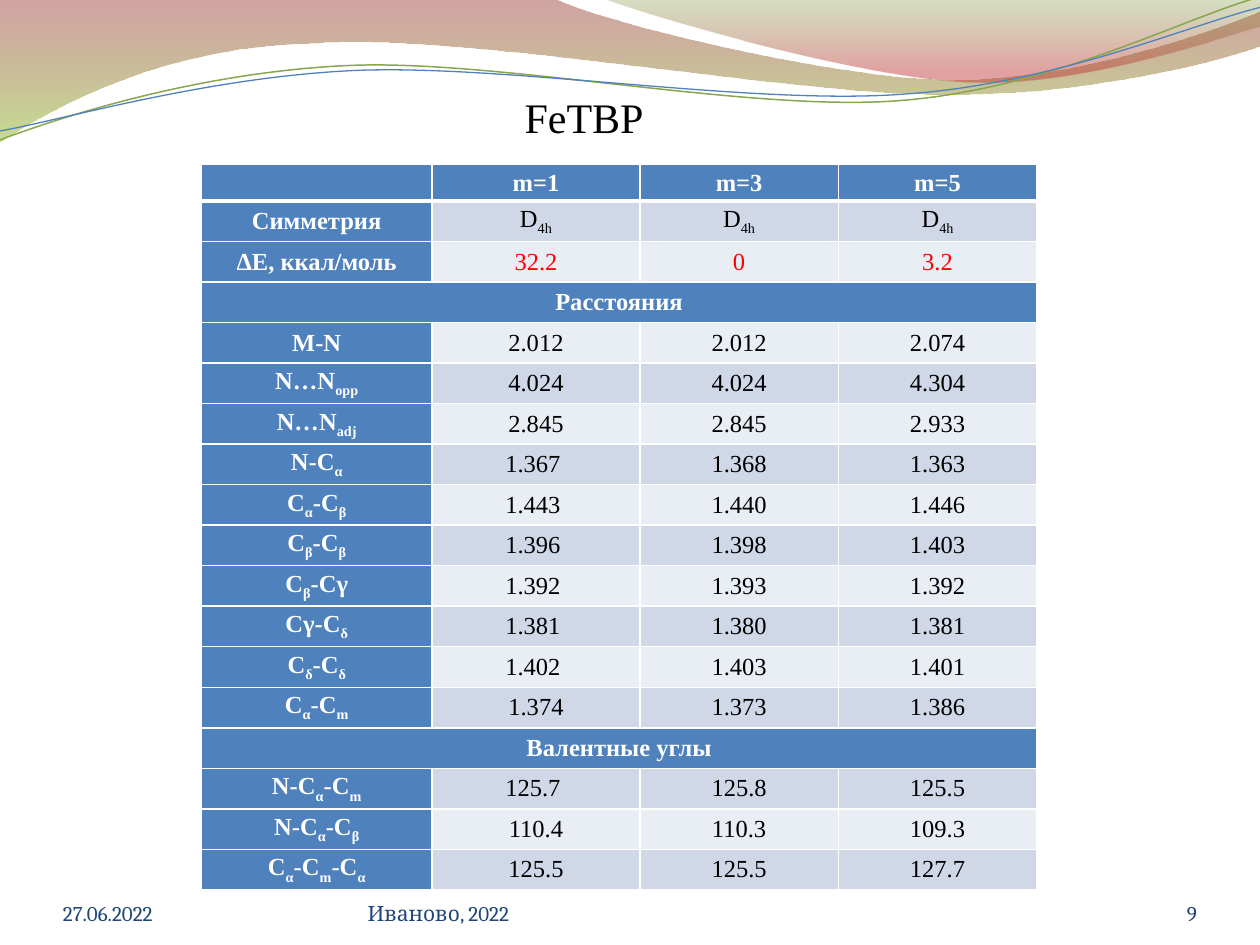
import math

import pptx
import pptx.util
import pptx.dml.color
import pptx.enum.text
import pptx.oxml.ns
from lxml import etree
from pptx.util import Cm

# Content: "~" switches subscript on and off
TITLE = "FeTBP"
FOOT = [  # text, left, width, align
    ("27.06.2022", 1.27, 5.92, "LEFT"),
    ("Иваново, 2022", 7.41, 9.32, "LEFT"),
    ("9", 22.02, 2.11, "RIGHT"),
]
ROWS = [
    ("", "m=1", "m=3", "m=5"),
    ("Симметрия", "D~4h", "D~4h", "D~4h"),
    ("ΔЕ, ккал/моль", "32.2", "0", "3.2"),
    ("Расстояния",),
    ("M-N", "2.012", "2.012", "2.074"),
    ("N…N~opp", "4.024", "4.024", "4.304"),
    ("N…N~adj", "2.845", "2.845", "2.933"),
    ("N-C~α", "1.367 ", "1.368", "1.363"),
    ("C~α~-C~β", "1.443 ", "1.440", "1.446"),
    ("C~β~-C~β", "1.396 ", "1.398", "1.403"),
    ("C~β~-Cγ", "1.392 ", "1.393", "1.392"),
    ("Cγ-C~δ", "1.381 ", "1.380", "1.381"),
    ("C~δ~-C~δ", "1.402 ", "1.403", "1.401"),
    ("C~α~-C~m", "1.374", "1.373", "1.386"),
    ("Валентные углы",),
    ("N-C~α~-C~m", "125.7 ", "125.8", "125.5"),
    ("N-C~α~-C~β", "110.4", "110.3", "109.3"),
    ("C~α~-C~m~-C~α", "125.5", "125.5", "127.7"),
]
RED_ROW = 2
COLS = [4.65, 4.19, 4.0, 4.0]
HEAD, TALL = 0.73, 14.63

# Waves in cm: pairs are corners, sixes are Bezier segments
BANDS = [  # points, gradient stops (position, colour, opacity in %)
    ([(0, 0), (11.18, -0.03), (12.09, 0.43, 16.87, 1.6, 19.25, 1.6),
      (21.67, 1.6, 24.33, 0.66, 25.4, 0.23), (25.43, 0.91),
      (24.97, 1.12, 22.1, 1.93, 18.95, 1.9),
      (15.8, 1.9, 9.7, 0.71, 6.53, 0.86),
      (3.28, 0.91, 1.17, 2.11, -0.03, 2.87), (0, 0)],
     [(0, "973330", 45), (1, "95C238", 55)]),
    ([(12.17, -0.03), (12.93, 0.28, 17.32, 1.57, 19.53, 1.65),
      (21.74, 1.75, 24.41, 0.81, 25.4, 0.53), (25.4, 0), (12.17, -0.03)],
     [(0, "769537", 30), (0.8, "BE3330", 45)]),
]
TILT = -2.7
LINES = [  # points, centre of tilt, colour, width
    ([(0, 2.82), (1.22, 2.36, 4.01, 1.45, 7.04, 1.32),
      (10.03, 1.19, 15.06, 2.26, 18.11, 2.03),
      (21.16, 1.8, 23.83, 0.38, 25.35, -0.05)],
     (12.67, 1.46), "89A54F", 0.85),
    ([(0, 2.64), (1.19, 2.44, 4.17, 1.55, 7.19, 1.42),
      (10.24, 1.3, 15.16, 2.13, 18.21, 1.9),
      (21.23, 1.7, 23.9, 0.53, 25.4, 0.15)],
     (12.69, 1.5), "4F81BD", 0.75),
]

THEME = {
    "serif": "Times New Roman", "foot font": "Cambria",
    "title": 24, "cell": 14, "foot": 12,
    "ink": "000000", "white": "FFFFFF", "red": "FF0000", "navy": "1E4677",
    "blue": "4F81BD", "bands": ["E9EDF4", "D0D8E8"],
}


def rgb(code):
    return pptx.dml.color.RGBColor.from_string(code)


def sub(node, tag, **attrs):
    return etree.SubElement(node, pptx.oxml.ns.qn(tag), **attrs)


def write(para, text, font, size, color, bold=False, align="CENTER"):
    para.alignment = getattr(pptx.enum.text.PP_ALIGN, align)
    for n, part in enumerate(text.split("~")):
        run = para.add_run()
        run.text = part
        run.font.name, run.font.size = font, pptx.util.Pt(size)
        run.font.bold = bold
        run.font.color.rgb = rgb(color)
        if n % 2:
            run.font._element.set("baseline", "-25000")


def turn(dot, mid, angle):
    """Rotate a point clockwise about mid."""
    x, y = dot[0] - mid[0], dot[1] - mid[1]
    sin, cos = math.sin(math.radians(angle)), math.cos(math.radians(angle))
    return mid[0] + x * cos - y * sin, mid[1] + x * sin + y * cos


def wave(shapes, points, close, mid=(0, 0), tilt=0):
    dots = [turn(seg[n:n + 2], mid, -tilt)
            for seg in points for n in range(0, len(seg), 2)]
    dots = [(Cm(x), Cm(y)) for x, y in dots]
    pen = shapes.build_freeform(*dots[0])
    pen.add_line_segments(dots[1:], close=close)
    shape = pen.convert_to_shape()
    shape.shadow.inherit = False
    shape.rotation = tilt % 360
    # Gather each three control points into one curve
    steps = iter(list(shape._element.iter(pptx.oxml.ns.qn("a:lnTo"))))
    for seg in points[1:]:
        first = next(steps)
        if len(seg) == 6:
            curve = etree.Element(pptx.oxml.ns.qn("a:cubicBezTo"))
            first.addprevious(curve)
            for step in (first, next(steps), next(steps)):
                curve.append(step[0])
                step.getparent().remove(step)
    return shape


def edge(cell, row):
    """Put white borders before the fill, thick under the header."""
    props = cell._tc.get_or_add_tcPr()
    for n, side in enumerate("LRTB"):
        thick = (row, side) in [(0, "B"), (1, "T")]
        line = sub(props, "a:ln" + side, w=str(pptx.util.Pt(3 if thick else 1)))
        sub(sub(line, "a:solidFill"), "a:srgbClr", val=THEME["white"])
        props.insert(n, line)


def main():
    deck = pptx.Presentation()
    deck.slide_width, deck.slide_height = Cm(25.4), Cm(19.05)
    slide = deck.slides.add_slide(deck.slide_layouts[5])
    shapes = slide.shapes
    waves = []

    # Waves along the top
    for points, stops in BANDS:
        band = wave(shapes, points, True)
        band.line.fill.background()
        band.fill.gradient()
        band.fill.gradient_angle = 270
        for stop, (place, color, alpha) in zip(band.fill.gradient_stops, stops):
            stop.position = place
            stop.color.rgb = rgb(color)
            tint = stop._gs.find(pptx.oxml.ns.qn("a:srgbClr"))
            sub(tint, "a:alpha", val=str(alpha * 1000))
        waves.append(band)
    for points, mid, color, width in LINES:
        line = wave(shapes, points, False, mid, TILT)
        line.fill.background()
        line.line.color.rgb = rgb(color)
        line.line.width = pptx.util.Pt(width)
        waves.append(line)

    # The waves belong to the layout
    for shape in waves:
        slide.slide_layout.shapes._spTree.append(shape._element)

    # Footer
    for text, left, width, align in FOOT:
        box = shapes.add_textbox(Cm(left), Cm(17.65), Cm(width), Cm(1.02))
        frame = box.text_frame
        frame.word_wrap = True
        frame.vertical_anchor = pptx.enum.text.MSO_ANCHOR.BOTTOM
        frame.margin_left = frame.margin_right = 0
        frame.margin_top = frame.margin_bottom = 0
        write(frame.paragraphs[0], text, THEME["foot font"], THEME["foot"],
              THEME["navy"], align=align)

    # Title
    title = shapes.title
    title.left, title.top = Cm(10.3), Cm(1.72)
    title.width, title.height = Cm(2.95), Cm(1.27)
    frame = title.text_frame
    frame.word_wrap = False
    frame.vertical_anchor = pptx.enum.text.MSO_ANCHOR.TOP
    write(frame.paragraphs[0], TITLE, THEME["serif"], THEME["title"],
          THEME["ink"])
    shapes._spTree.append(title._element)

    # Table
    table = shapes.add_table(len(ROWS), len(COLS), Cm(4.06), Cm(3.32),
                             Cm(sum(COLS)), Cm(TALL)).table
    for col, width in zip(table.columns, COLS):
        col.width = Cm(width)
    step = (TALL - HEAD) / (len(ROWS) - 1)
    for r, texts in enumerate(ROWS):
        table.rows[r].height = Cm(step if r else HEAD)
        whole = len(texts) == 1
        if whole:
            table.cell(r, 0).merge(table.cell(r, len(COLS) - 1))
        for c in range(len(COLS)):
            cell = table.cell(r, c)
            strong = r == 0 or c == 0 or whole
            cell.fill.solid()
            cell.fill.fore_color.rgb = rgb(
                THEME["blue"] if strong else THEME["bands"][r % 2])
            edge(cell, r)
            cell.margin_left = cell.margin_right = Cm(0.18)
            cell.margin_top = cell.margin_bottom = 0
            cell.vertical_anchor = pptx.enum.text.MSO_ANCHOR.MIDDLE
            para = cell.text_frame.paragraphs[0]
            if c < len(texts) and texts[c]:
                color = "white" if strong else "red" if r == RED_ROW else "ink"
                write(para, texts[c], THEME["serif"], THEME["cell"],
                      THEME[color], strong)
            else:
                sub(para._p, "a:endParaRPr", sz=str(THEME["cell"] * 100))

    deck.save("out.pptx")


if __name__ == "__main__":
    main()
